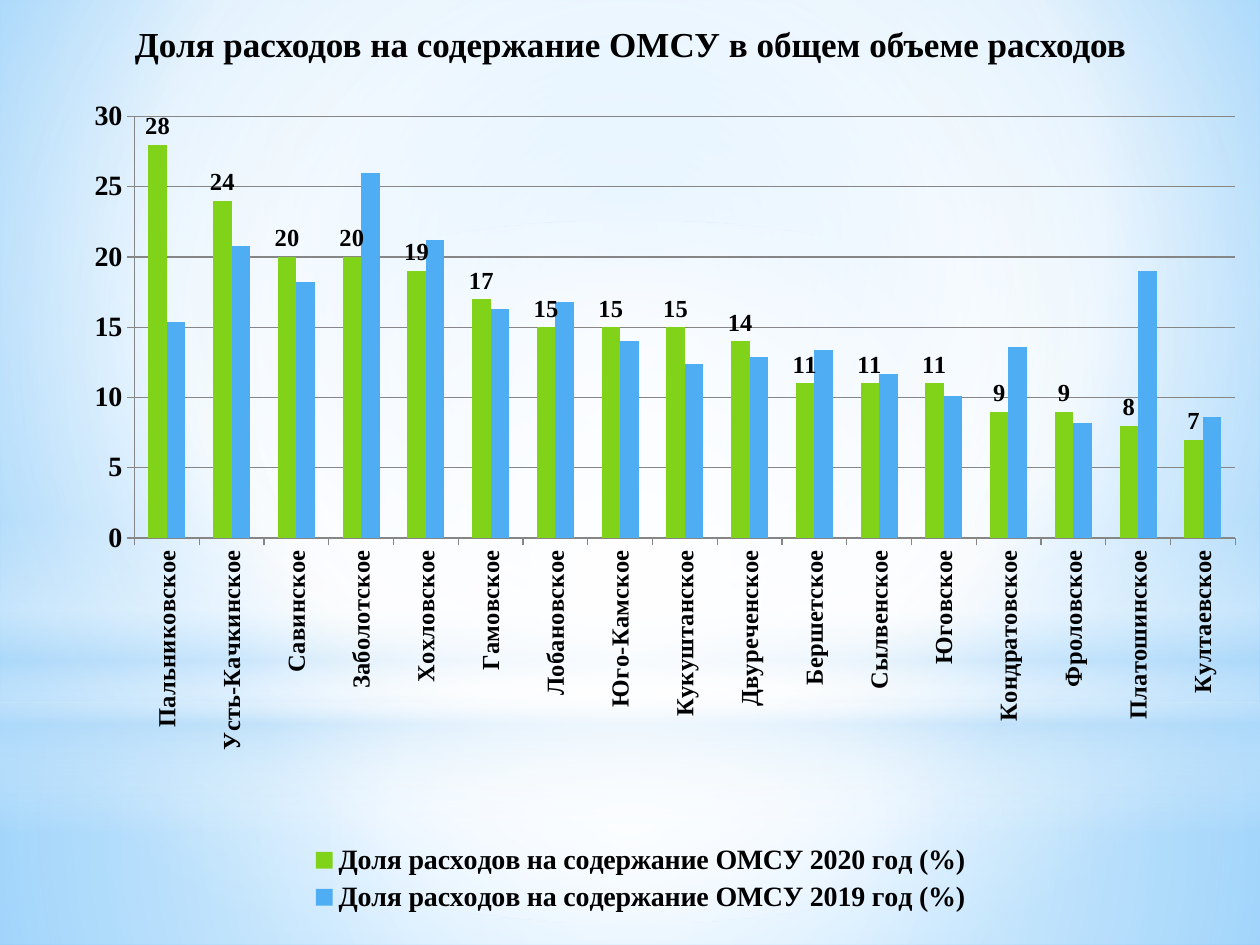
from lxml import etree
from pptx import Presentation
from pptx.chart.data import CategoryChartData
from pptx.dml.color import RGBColor
from pptx.enum.chart import XL_CHART_TYPE, XL_LABEL_POSITION, XL_LEGEND_POSITION, XL_TICK_MARK
from pptx.enum.shapes import MSO_SHAPE
from pptx.enum.text import MSO_ANCHOR, PP_ALIGN
from pptx.oxml import parse_xml
from pptx.oxml.ns import nsdecls, qn
from pptx.util import Cm, Pt

COLUMNS = XL_CHART_TYPE.COLUMN_CLUSTERED
OUTSIDE_END = XL_LABEL_POSITION.OUTSIDE_END
BOTTOM = XL_LEGEND_POSITION.BOTTOM
TICK_OUT, TICK_NONE = XL_TICK_MARK.OUTSIDE, XL_TICK_MARK.NONE
RECT, OVAL = MSO_SHAPE.RECTANGLE, MSO_SHAPE.OVAL

TITLE = "Доля расходов на содержание ОМСУ в общем объеме расходов"
SERIES_NAME = "Доля расходов на содержание ОМСУ {} год (%)"
SHARES = [
    ("Пальниковское", 28, 15.4),
    ("Усть-Качкинское", 24, 20.8),
    ("Савинское", 20, 18.2),
    ("Заболотское", 20, 26),
    ("Хохловское", 19, 21.2),
    ("Гамовское", 17, 16.3),
    ("Лобановское", 15, 16.8),
    ("Юго-Камское", 15, 14),
    ("Кукуштанское", 15, 12.4),
    ("Двуреченское", 14, 12.9),
    ("Бершетское", 11, 13.4),
    ("Сылвенское", 11, 11.7),
    ("Юговское", 11, 10.1),
    ("Кондратовское", 9, 13.6),
    ("Фроловское", 9, 8.2),
    ("Платошинское", 8, 19),
    ("Култаевское", 7, 8.6),
]
COLORS = {
    "text": "000000", "grid": "868686", "2020": "81D31A", "2019": "4FADF3",
    "white": "FFFFFF", "haze": "B4DCFA", "sky": "9ED5FF", "deep": "5BB9FF",
}
FONT = "Times New Roman"
CENTER = (50, 50, 50, 50)
BACKGROUND = [(0, "sky", 100), (60, "white", 100), (100, "deep", 100)]
GLOWS = [
    (RECT, (0, 14.17, 25.4, 4.88), [(0, "white", 91), (37, "white", 76), (100, "haze", 79)], CENTER),
    (RECT, (0, 0, 25.4, 14.17), [(0, "white", 89), (48, "white", 62), (100, "haze", 79)], CENTER),
    (RECT, (0, 10.46, 25.4, 6.35), [(0, "white", 0), (29, "white", 30), (45, "haze", 40),
                                   (55, "white", 26), (65, "haze", 60), (100, "white", 0)], None),
    (OVAL, (0, 4.45, 25.4, 14.17), [(0, "white", 100), (56, "white", 0)], CENTER),
]
CHART_BOX = (0.71, 1.73, 24.41, 16.79)
TITLE_BOX = (0.51, 0.33, 24.41, 1.6)
PLOT = {"x": 0.082, "y": 0.037, "w": 0.909, "h": 0.506}


def rgb(name):
    return RGBColor.from_string(COLORS[name])


def style_font(font, size):
    for name, value in {"size": Pt(size), "bold": True, "name": FONT}.items():
        setattr(font, name, value)
    font.color.rgb = rgb("text")


def set_gradient(fill, root, stops, focus):
    fill.solid()
    solid = next(root.iter(qn("a:solidFill")))
    grad = etree.Element(qn("a:gradFill"), rotWithShape="1")
    stop_list = etree.SubElement(grad, qn("a:gsLst"))
    for pos, color, alpha in stops:
        gs = etree.SubElement(stop_list, qn("a:gs"), pos=str(pos * 1000))
        clr = etree.SubElement(gs, qn("a:srgbClr"), val=COLORS[color])
        etree.SubElement(clr, qn("a:alpha"), val=str(alpha * 1000))
    if focus:
        shade = etree.SubElement(grad, qn("a:path"), {"path": "circle"})
        sides = {side: str(v * 1000) for side, v in zip("ltrb", focus)}
        etree.SubElement(shade, qn("a:fillToRect"), sides)
    else:
        etree.SubElement(grad, qn("a:lin"), ang="5400000", scaled="0")
    solid.getparent().replace(solid, grad)


def add_glows(s):
    set_gradient(s.background.fill, s.element, BACKGROUND, (20, 10, 20, 60))
    for kind, box, stops, focus in GLOWS:
        sp = s.shapes.add_shape(kind, *map(Cm, box))
        sp.shadow.inherit = False
        sp.line.fill.background()
        set_gradient(sp.fill, sp.element.spPr, stops, focus)


def add_share_chart(s):
    names, shares_2020, shares_2019 = zip(*SHARES)
    data = CategoryChartData()
    data.categories = names
    years = {"2020": shares_2020, "2019": shares_2019}
    for year, values in years.items():
        data.add_series(SERIES_NAME.format(year), values)
    chart = s.shapes.add_chart(COLUMNS, *map(Cm, CHART_BOX), data).chart
    style_font(chart.font, 18)
    chart.has_title = False
    chart.has_legend = True
    chart.legend.position = BOTTOM
    chart.legend.include_in_layout = False
    style_font(chart.legend.font, 16)

    plot = chart.plots[0]
    plot.gap_width, plot.overlap, plot.vary_by_categories = 150, 0, False
    for series, year in zip(plot.series, years):
        series.format.fill.solid()
        series.format.fill.fore_color.rgb = rgb(year)
    labels = plot.series[0].data_labels
    label_format = {"show_value": True, "number_format": "0",
                    "number_format_is_linked": False, "position": OUTSIDE_END}
    for name, value in label_format.items():
        setattr(labels, name, value)
    style_font(labels.font, 14)

    cat, val = chart.category_axis, chart.value_axis
    val.minimum_scale, val.maximum_scale, val.major_unit = 0, 30, 5
    val.has_major_gridlines = True
    val.tick_labels.number_format = "0"
    val.tick_labels.number_format_is_linked = False
    for axis, size in ((cat, 14), (val, 16)):
        axis.major_tick_mark, axis.minor_tick_mark = TICK_OUT, TICK_NONE
        style_font(axis.tick_labels.font, size)
    for line in (cat.format.line, val.format.line, val.major_gridlines.format.line):
        line.color.rgb = rgb("grid")
        line.width = Pt(0.75)
    next(cat._element.iter(qn("a:bodyPr"))).set("rot", "-5400000")

    parts = "".join(f'<c:{k}Mode val="edge"/>' for k in "xy")
    parts += "".join(f'<c:{k} val="{v}"/>' for k, v in PLOT.items())
    layout = parse_xml(f'<c:layout {nsdecls("c")}><c:manualLayout>'
                       f'<c:layoutTarget val="inner"/>{parts}</c:manualLayout></c:layout>')
    area = chart._chartSpace.chart.plotArea
    for old in area.findall(qn("c:layout")):
        area.remove(old)
    area.insert(0, layout)


def set_title(s):
    sp = s.shapes.title
    sp.left, sp.top, sp.width, sp.height = map(Cm, TITLE_BOX)
    tf = sp.text_frame
    tf.word_wrap = True
    tf.vertical_anchor = MSO_ANCHOR.TOP
    p = tf.paragraphs[0]
    p.alignment = PP_ALIGN.CENTER
    r = p.add_run()
    r.text = TITLE
    style_font(r.font, 20)
    s.shapes.element.append(sp.element)


def main():
    prs = Presentation()
    prs.slide_width, prs.slide_height = Cm(25.4), Cm(19.05)
    s = prs.slides.add_slide(prs.slide_layouts[5])
    add_glows(s)
    add_share_chart(s)
    set_title(s)
    prs.save("out.pptx")


if __name__ == "__main__":
    main()
